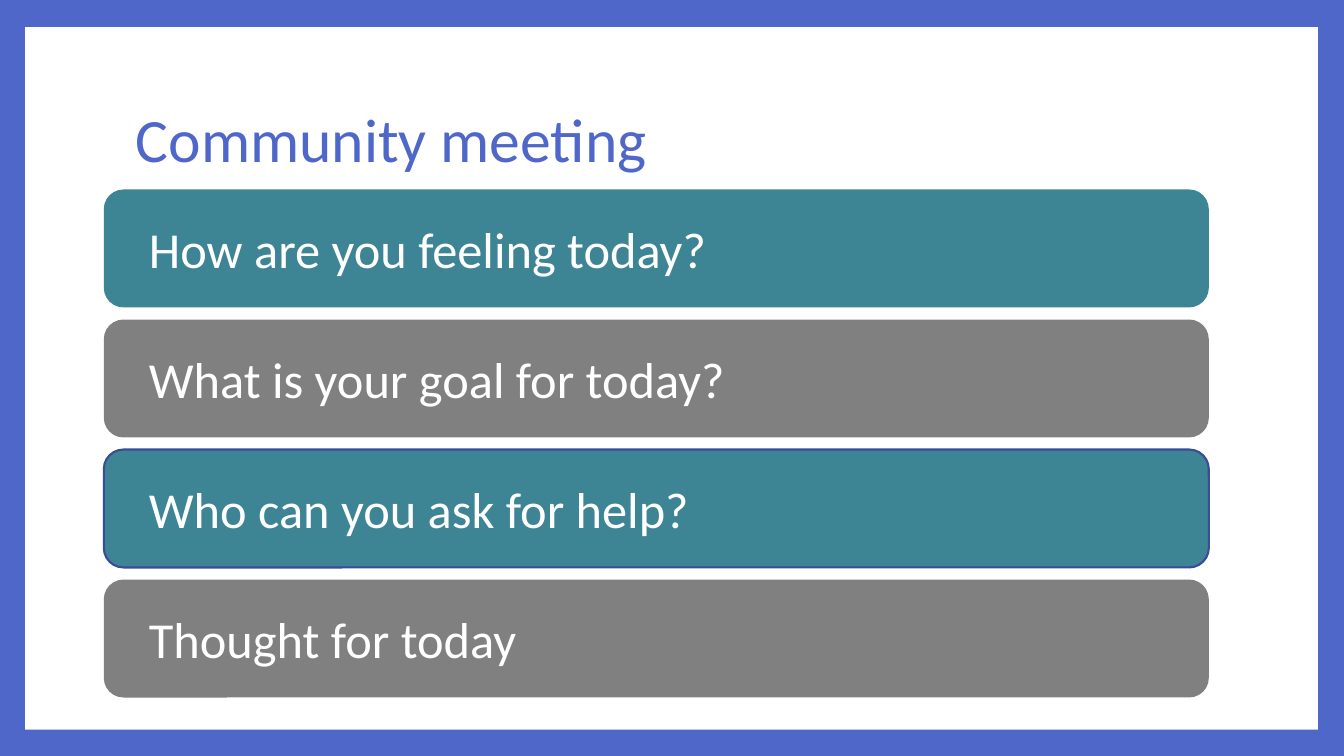
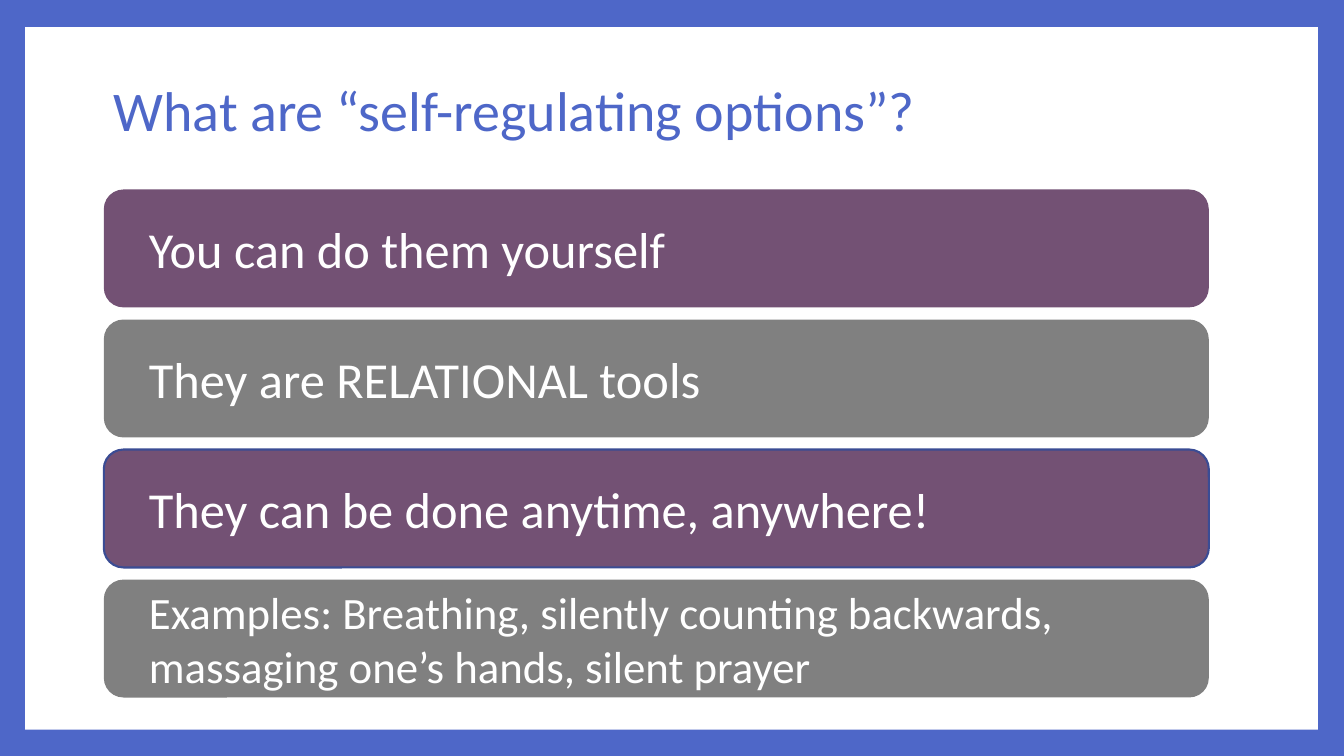
from pptx import Presentation
from pptx.dml.color import RGBColor
from pptx.enum.shapes import MSO_SHAPE as Shape
from pptx.enum.text import MSO_ANCHOR as Anchor, PP_ALIGN as Align
from pptx.util import Inches, Pt

BLUE, WHITE, GRAY = "4E67C8", "FFFFFF", "808080"
TEAL, PURPLE, OUTLINE = "3D8495", "735174", "3A4C94"
FONT = "Calibri"
BAR_LEFT, BAR_TOP, BAR_WIDTH, BAR_HEIGHT, BAR_PITCH = 1.03, 1.88, 10.96, 1.17, 1.29
OUTLINED_BAR = 2

TITLE_FRAME = {"word_wrap": True, "vertical_anchor": Anchor.MIDDLE}
BAR_FRAME = {
    **TITLE_FRAME,
    "margin_left": Inches(0.39),
    "margin_right": Inches(0.39),
    "margin_top": 0,
    "margin_bottom": 0,
}

SLIDES = [
    {
        "title": "Community meeting",
        "title_box": (1.25, 0.67, 10.8, 1.48),
        "title_size": 44,
        "accent": TEAL,
        "bars": [
            ("How are you feeling today?", 36),
            ("What is your goal for today?", 36),
            ("Who can you ask for help?", 36),
            ("Thought for today", 36),
        ],
    },
    {
        "title": "What are “self-regulating options”?",
        "title_box": (1.03, 0.5, 10, 1.25),
        "title_size": 40,
        "accent": PURPLE,
        "bars": [
            ("You can do them yourself", 36),
            ("They are RELATIONAL tools", 36),
            ("They can be done anytime, anywhere!", 36),
            ("Examples: Breathing, silently counting backwards, "
             "massaging one’s hands, silent prayer", 32),
        ],
    },
]


def rgb(value):
    return RGBColor.from_string(value)


def apply(target, values):
    for name, value in values.items():
        setattr(target, name, value)


def paint(fill, color):
    fill.solid()
    fill.fore_color.rgb = rgb(color)


def write(frame, text, size, color, frame_format, spacing=1.0):
    apply(frame, frame_format)
    paragraph = frame.paragraphs[0]
    apply(paragraph, {"alignment": Align.LEFT, "line_spacing": spacing})
    run = paragraph.add_run()
    run.text = text
    apply(run.font, {"name": FONT, "size": Pt(size)})
    run.font.color.rgb = rgb(color)


def add_block(slide, preset, box, color, outline=None):
    block = slide.shapes.add_shape(preset, *map(Inches, box))
    block.shadow.inherit = False
    paint(block.fill, color)
    if outline:
        paint(block.line.fill, outline)
        block.line.width = Pt(1.5)
    else:
        block.line.fill.background()
    return block


def add_title(slide, text, box, size):
    title = slide.shapes.add_textbox(*map(Inches, box))
    write(title.text_frame, text, size, BLUE, TITLE_FRAME, 0.9)


def add_bars(slide, bars, accent):
    for index, (text, size) in enumerate(bars):
        box = (BAR_LEFT, BAR_TOP + index * BAR_PITCH, BAR_WIDTH, BAR_HEIGHT)
        color = GRAY if index % 2 else accent
        outline = OUTLINE if index == OUTLINED_BAR else None
        bar = add_block(slide, Shape.ROUNDED_RECTANGLE, box, color, outline)
        write(bar.text_frame, text, size, WHITE, BAR_FRAME)


def main():
    deck = Presentation()
    apply(deck, {"slide_width": Inches(13.33), "slide_height": Inches(7.5)})
    paint(deck.slide_master.background.fill, BLUE)
    for content in SLIDES:
        slide = deck.slides.add_slide(deck.slide_layouts[6])
        add_block(slide, Shape.RECTANGLE, (0.25, 0.27, 12.82, 6.97), WHITE)
        add_title(slide, content["title"], content["title_box"], content["title_size"])
        add_bars(slide, content["bars"], content["accent"])
    deck.save("out.pptx")


if __name__ == "__main__":
    main()
